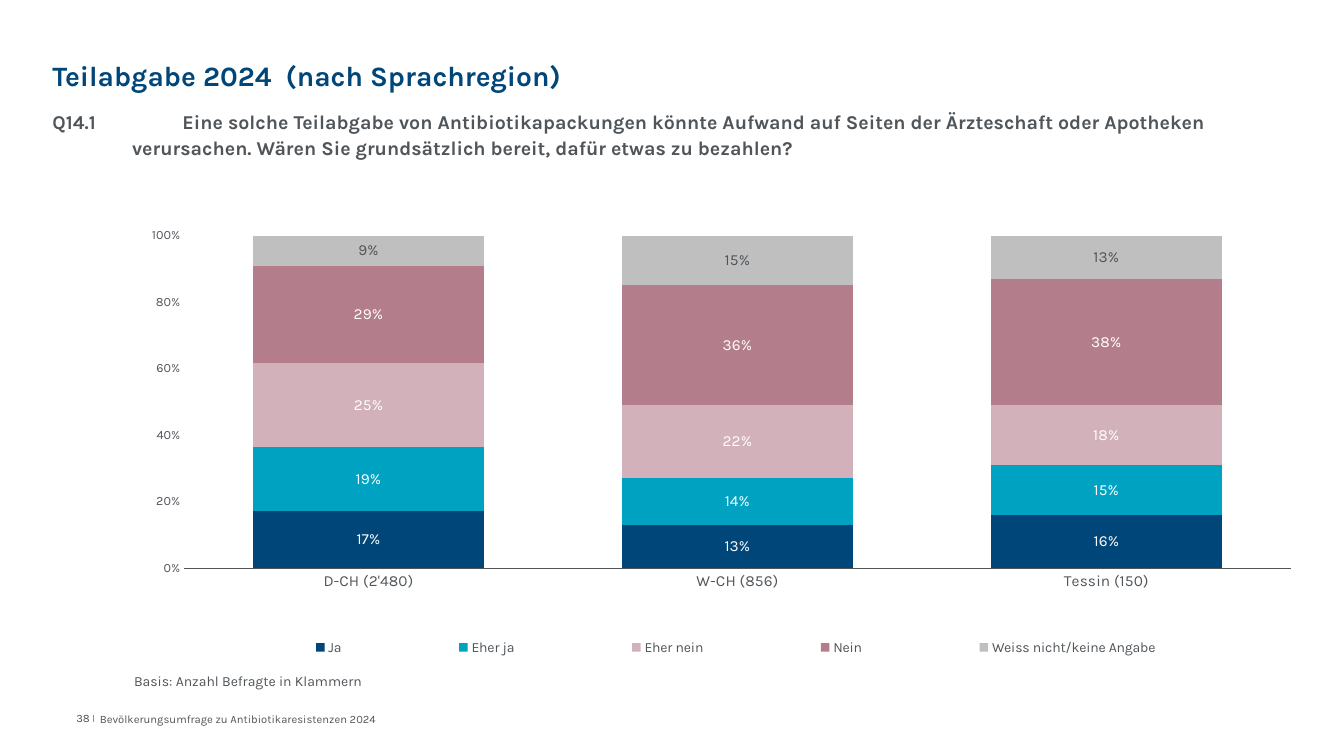
from dataclasses import dataclass

from lxml import etree
from pptx import Presentation
from pptx.chart.data import CategoryChartData
from pptx.dml.color import RGBColor
from pptx.enum import chart as charts, text
from pptx.oxml import ns
from pptx.util import Inches, Pt


@dataclass(frozen=True)
class Theme:
    font: str = "Karla"
    navy: str = "004678"
    grey: str = "50555A"
    white: str = "FFFFFF"
    title: int = 20
    question: int = 14
    label: int = 11
    note: int = 10
    axis: int = 9
    footer: int = 8


@dataclass(frozen=True)
class Box:
    left: float
    top: float
    width: float
    height: float

    def lengths(self) -> tuple:
        return tuple(Inches(n) for n in (self.left, self.top, self.width, self.height))


@dataclass(frozen=True)
class Answer:
    name: str
    shares: tuple[float, ...]
    fill: str
    label_color: str = Theme.white


THEME = Theme()
REGIONS = ("D-CH (2'480)", "W-CH (856)", "Tessin (150)")
ANSWERS = (
    Answer("Ja", (0.17, 0.13, 0.16), THEME.navy),
    Answer("Eher ja", (0.19, 0.14, 0.15), "00A2C2"),
    Answer("Eher nein", (0.25, 0.22, 0.18), "D2B1BA"),
    Answer("Nein", (0.29, 0.36, 0.38), "B47D8C"),
    Answer("Weiss nicht/keine Angabe", (0.09, 0.15, 0.13), "BFBFBF", THEME.grey),
)
QUESTION = (
    "Q14.1\t\tEine solche Teilabgabe von Antibiotikapackungen könnte Aufwand auf Seiten "
    "der Ärzteschaft oder Apotheken verursachen. Wären Sie grundsätzlich bereit, "
    "dafür etwas zu bezahlen?"
)


def style_font(font, size: float, color: str = THEME.grey, bold: bool = False) -> None:
    font.name = THEME.font
    font.size = Pt(size)
    font.bold = bold
    font.color.rgb = RGBColor.from_string(color)


def write(shape, words: str, size: float, color: str = THEME.grey, bold: bool = False,
          spacing: float = 1.0, anchor=text.MSO_ANCHOR.TOP):
    """Fill a text shape without insets and return its paragraph."""
    frame = shape.text_frame
    frame.word_wrap = True
    frame.auto_size = text.MSO_AUTO_SIZE.NONE
    frame.vertical_anchor = anchor
    frame.margin_left = frame.margin_top = frame.margin_right = frame.margin_bottom = 0
    paragraph = frame.paragraphs[0]
    paragraph.add_run().text = words
    paragraph.alignment = text.PP_ALIGN.LEFT
    paragraph.line_spacing = spacing
    style_font(paragraph.font, size, color, bold)
    return paragraph


def add_texts(slide) -> None:
    def text_box(*place: float):
        return slide.shapes.add_textbox(*Box(*place).lengths())

    title = slide.shapes.title
    title.left, title.top, title.width, title.height = Box(0.52, 0.29, 8.27, 0.63).lengths()
    write(title, "Teilabgabe 2024  (nach Sprachregion)", THEME.title, THEME.navy,
          True, 0.9, text.MSO_ANCHOR.BOTTOM)

    question = write(text_box(0.52, 1.07, 12.13, 0.47), QUESTION, THEME.question,
                     bold=True, spacing=1.1)
    properties = question._p.get_or_add_pPr()
    properties.set("marL", str(Inches(0.79)))
    properties.set("indent", str(Inches(-0.79)))

    write(text_box(1.33, 6.66, 7.44, 0.16), "Basis: Anzahl Befragte in Klammern",
          THEME.note, spacing=1.1)
    write(text_box(0.99, 7.04, 7.81, 0.16),
          "Bevölkerungsumfrage zu Antibiotikaresistenzen 2024", THEME.footer,
          anchor=text.MSO_ANCHOR.BOTTOM)
    number = write(text_box(0.52, 7.04, 0.42, 0.16), "38 ", THEME.footer,
                   anchor=text.MSO_ANCHOR.BOTTOM)
    number.alignment = text.PP_ALIGN.RIGHT
    divider = number.add_run()
    divider.text = "|"
    divider.font.size = Pt(10)
    divider._r.get_or_add_rPr().set("baseline", "10000")


def set_layout(parent, index: int, place: Box, inner: bool = False) -> None:
    """Place a chart part by fractions of the chart area."""
    for old in parent.findall(ns.qn("c:layout")):
        parent.remove(old)
    layout = etree.Element(ns.qn("c:layout"))
    manual = etree.SubElement(layout, ns.qn("c:manualLayout"))
    settings = {"layoutTarget": "inner"} if inner else {}
    settings |= {"xMode": "edge", "yMode": "edge", "x": place.left, "y": place.top,
                 "w": place.width, "h": place.height}
    for tag, value in settings.items():
        etree.SubElement(manual, ns.qn(f"c:{tag}")).set("val", str(value))
    parent.insert(index, layout)


def style_axes(chart) -> None:
    regions, shares = chart.category_axis, chart.value_axis
    for axis, size in ((regions, THEME.label), (shares, THEME.axis)):
        axis.has_major_gridlines = False
        axis.major_tick_mark = axis.minor_tick_mark = charts.XL_TICK_MARK.NONE
        style_font(axis.tick_labels.font, size)
    regions.format.line.color.rgb = RGBColor.from_string(THEME.grey)
    regions.format.line.width = Pt(0.5)
    shares.format.line.fill.background()
    shares.minimum_scale, shares.maximum_scale, shares.major_unit = 0, 1, 0.2
    shares.tick_labels.number_format = "0%"
    shares.tick_labels.number_format_is_linked = False


def add_answer_chart(slide) -> None:
    data = CategoryChartData(number_format="0%")
    data.categories = REGIONS
    for answer in ANSWERS:
        data.add_series(answer.name, answer.shares)
    chart = slide.shapes.add_chart(charts.XL_CHART_TYPE.COLUMN_STACKED_100,
                                   *Box(1.31, 2.18, 11.74, 4.49).lengths(), data).chart
    chart.has_title = False
    style_font(chart.font, 12)
    style_axes(chart)

    plot = chart.plots[0]
    plot.gap_width, plot.overlap, plot.vary_by_categories = 60, 100, False
    for series, answer in zip(plot.series, ANSWERS):
        series.format.fill.solid()
        series.format.fill.fore_color.rgb = RGBColor.from_string(answer.fill)
        labels = series.data_labels
        labels.show_value = True
        labels.number_format = "0%"
        labels.number_format_is_linked = False
        style_font(labels.font, THEME.label, answer.label_color)

    chart.has_legend = True
    legend = chart.legend
    legend.position = charts.XL_LEGEND_POSITION.BOTTOM
    legend.include_in_layout = False
    style_font(legend.font, THEME.note)
    set_layout(legend._element, 1, Box(0.06, 0.91, 0.9, 0.07))
    plot_area = chart._chartSpace.chart.plotArea
    set_layout(plot_area, 0, Box(0.044, 0.035, 0.935, 0.735), inner=True)


def main() -> None:
    presentation = Presentation()
    presentation.slide_width = Inches(13.33)
    presentation.slide_height = Inches(7.5)
    slide = presentation.slides.add_slide(presentation.slide_layouts.get_by_name("Title Only"))
    add_texts(slide)
    add_answer_chart(slide)
    presentation.save("out.pptx")


if __name__ == "__main__":
    main()
